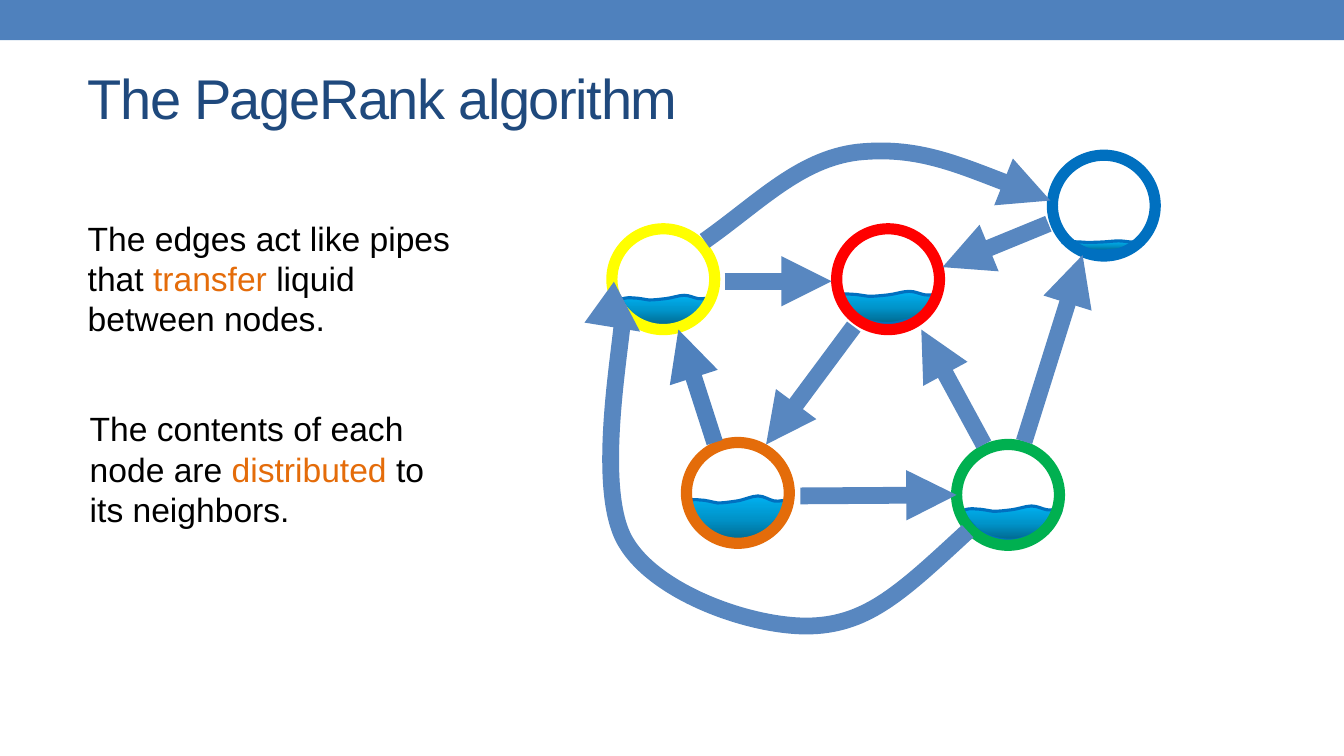
from lxml import etree
from copy import deepcopy
from pptx import Presentation
from pptx.dml.color import RGBColor
from pptx.enum.shapes import MSO_CONNECTOR, MSO_SHAPE
from pptx.enum.text import MSO_ANCHOR, MSO_AUTO_SIZE, PP_ALIGN
from pptx.oxml.ns import qn
from pptx.util import Inches, Pt

RECT, OVAL = MSO_SHAPE.RECTANGLE, MSO_SHAPE.OVAL
LINE = MSO_CONNECTOR.STRAIGHT
TOP, LEFT = MSO_ANCHOR.TOP, PP_ALIGN.LEFT
FIXED = MSO_AUTO_SIZE.NONE
BLUE, PIPE, ORANGE = "4F81BD", "5887C0", "E46C0A"
SHADES = ((0, "00688E"), (0.5, "0094CA"), (1, "00B0F0"))
RING = (10.2, 10)
WAVE_SIZE = (102, 45)
WAVE = [
    (0, 6), (4, 4), (9, 3), (14, 4), (20, 4), (26, 6), (32, 7),
    (38, 7), (44, 6), (51, 5), (58, 4), (66, 0), (72, 0),
    (78, 0), (83, 4), (88, 5), (93, 6), (101, 3), (102, 5),
    (104, 7), (100, 13), (97, 17), (95, 20), (93, 22), (89, 25),
    (86, 28), (83, 33), (78, 36), (74, 39), (69, 41), (64, 42),
    (60, 44), (56, 45), (50, 45), (45, 45), (38, 44), (33, 42),
    (28, 41), (25, 38), (22, 36), (19, 34), (17, 33), (14, 30),
    (12, 26), (7, 20), (5, 17),
]
NODES = [
    ("0070C0", (104.4, 15.4), (105.4, 23.9, 7.9, 1)),
    ("FF0000", (83, 22.7), (83, 28.9, 10.2, 3.2)),
    (ORANGE, (68.1, 43.9), (68, 49.2, 10.2, 4.5)),
    ("FFFF00", (60.7, 22.7), (61.6, 29.3, 8.9, 3)),
    ("00B050", (94.9, 44.1), (95.5, 50.2, 9.7, 3.4)),
]
EDGES = [
    ((104, 22.2), (93.5, 26.5), PIPE),
    ((101.6, 43.8), (107.4, 25.3), PIPE),
    ((97.6, 44.1), (91.4, 32.7), PIPE),
    ((79.4, 49.2), (94.9, 49.1), PIPE),
    ((71.9, 27.9), (82.5, 27.9), PIPE),
    ((84.7, 32.4), (76, 44.1), PIPE),
    ((70.9, 43.9), (67.3, 32.7), BLUE),
]
BENDS = [
    [(69.9, 23.9), (75.3, 20.1), (79.3, 15.8), (85.1, 15.1),
     (90.8, 14.5), (97.6, 17.2), (104.2, 19.9)],
    [(96, 52.7), (89.6, 58.6), (86.2, 61.9), (80.5, 62.1),
     (74.9, 62.3), (65.2, 59), (62.1, 53.8),
     (59, 48.7), (61.6, 34.8), (61.8, 31.3),
     (62.1, 27.8), (63, 32.7), (63.5, 32.9)],
]
NOTES = [
    ((7.7, 21.1), ("The edges act like pipes that ", "transfer",
                   " liquid between nodes.")),
    ((7.9, 40), ("The contents of each node are ", "distributed",
                 " to its neighbors.")),
]


def cell(*nums):
    """Turn grid columns and rows, ten to the inch, into lengths."""
    return [Inches(num / 10) for num in nums]


def rgb(code):
    """Turn a hex string into a colour."""
    return RGBColor.from_string(code)


def stroke(shape, color, width):
    """Set the line colour and width of a shape."""
    shape.line.color.rgb = rgb(color)
    shape.line.width = Pt(width)


def arrow(shape, color):
    """Give a line the thick pipe style with an arrowhead."""
    stroke(shape, color, 12)
    ln = shape.line._get_or_add_ln()
    etree.SubElement(ln, qn("a:tailEnd"), type="triangle")


def curve(slide, points, close):
    """Draw a chain of cubic curves through its control points."""
    spots = [cell(*point) for point in points]
    pen = slide.shapes.build_freeform(*spots[0])
    pen.add_line_segments(spots[1:], close=close)
    shape = pen.convert_to_shape()
    shape.shadow.inherit = False
    path = shape._element.spPr.find(".//" + qn("a:path"))
    for i, step in enumerate(path.findall(qn("a:lnTo"))[:len(points) - 1]):
        if i % 3 == 0:
            arc = etree.Element(qn("a:cubicBezTo"))
            step.addprevious(arc)
        arc.append(step[0])
        path.remove(step)
    return shape


def water(slide, left, top, width, height):
    """Draw the liquid of one node, scaled to its box."""
    wide, high = WAVE_SIZE
    points = [(left + x * width / wide, top + y * height / high)
              for x, y in WAVE]
    shape = curve(slide, points, True)
    shape.fill.gradient()
    shape.fill.gradient_angle = 90
    stops = shape._element.spPr.find(".//" + qn("a:gsLst"))
    stops.insert(1, deepcopy(stops[0]))
    for stop, (pos, color) in zip(shape.fill.gradient_stops, SHADES):
        stop.position = pos
        stop.color.rgb = rgb(color)
    stroke(shape, "0070C0", 2.25)


def ring(slide, color, spot):
    """Draw the coloured circle of a node."""
    shape = slide.shapes.add_shape(OVAL, *cell(*spot, *RING))
    shape.shadow.inherit = False
    shape.fill.background()
    stroke(shape, color, 8)


def pipe(slide, start, end, color):
    """Draw a straight arrow between two nodes."""
    line = slide.shapes.add_connector(LINE, *cell(*start, *end))
    arrow(line, color)
    etree.SubElement(line._element.spPr, qn("a:effectLst"))


def bend(slide, points):
    """Draw a curved arrow between two nodes."""
    shape = curve(slide, points, False)
    shape.fill.background()
    arrow(shape, PIPE)


def bar(slide):
    """Draw the band along the top edge."""
    shape = slide.shapes.add_shape(RECT, *cell(0, 0, 133.33, 4))
    shape.shadow.inherit = False
    shape.fill.solid()
    shape.fill.fore_color.rgb = rgb(BLUE)
    shape.line.fill.background()


def write(holder, box, runs, size, wrap=True):
    """Place a placeholder and fill it with coloured runs."""
    holder.left, holder.top, holder.width, holder.height = cell(*box)
    frame = holder.text_frame
    frame.word_wrap = wrap
    frame.auto_size = FIXED
    frame.vertical_anchor = TOP
    para = frame.paragraphs[0]
    para.alignment = LEFT
    para.space_before = Pt(0)
    props = para._p.get_or_add_pPr()
    props.set("marL", "0")
    props.set("indent", "0")
    etree.SubElement(props, qn("a:buNone"))
    for text, color in runs:
        run = para.add_run()
        run.text = text
        run.font.name = "Arial"
        run.font.size = Pt(size)
        run.font.color.rgb = rgb(color)
    return para


def main():
    """Build the slide and save it."""
    deck = Presentation()
    deck.slide_width, deck.slide_height = cell(133.33, 75)
    slide = deck.slides.add_slide(deck.slide_layouts[3])
    title, *bodies = slide.placeholders
    head = write(title, (7.7, 5.8, 61, 7.7),
                 [("The PageRank algorithm", "1F497D")], 40, False)
    head.runs[0].font._element.set("spc", "-100")
    for body, (spot, texts) in zip(bodies, NOTES):
        runs = zip(texts, ("000000", ORANGE, "000000"))
        write(body, (*spot, 39.3, 13.1), runs, 24)
    bar(slide)
    for _, _, box in NODES:
        water(slide, *box)
    for color, spot, _ in NODES:
        ring(slide, color, spot)
    for edge in EDGES:
        pipe(slide, *edge)
    for points in BENDS:
        bend(slide, points)
    deck.save("out.pptx")


if __name__ == "__main__":
    main()
